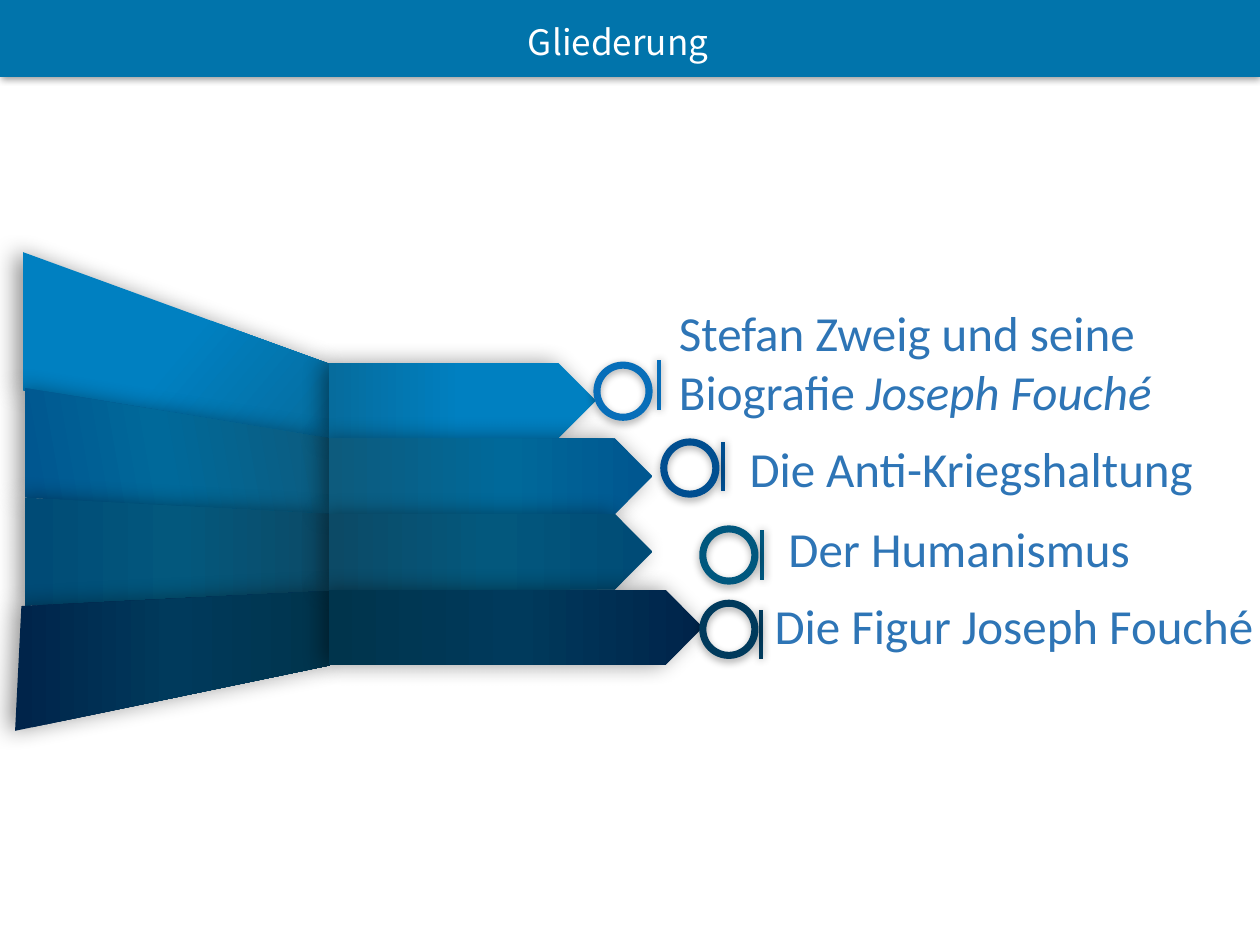
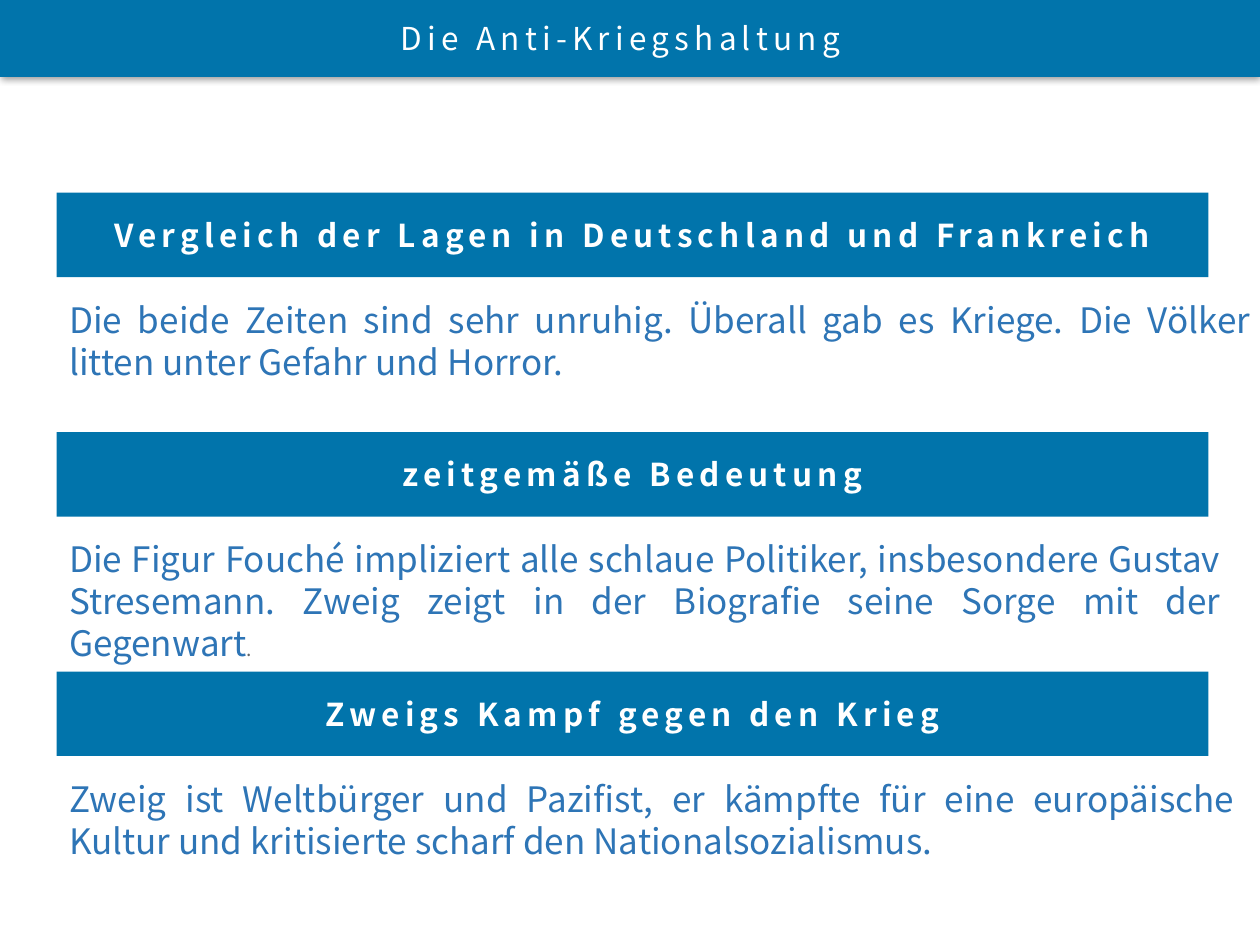
from dataclasses import dataclass

from lxml import etree
from pptx import Presentation
from pptx import util as u
from pptx.dml.color import RGBColor
from pptx.enum import shapes, text
from pptx.oxml import ns


@dataclass(frozen=True)
class Theme:
    band: str = "0174AB"
    body: str = "2E75B6"
    light: str = "FFFFFF"
    muted: str = "666666"
    shade: str = "000000"
    sans: str = "Noto Sans CJK SC"
    agenda_font: str = "Calibri"
    agenda_size: int = 28
    body_size: int = 20
    heading_size: int = 18
    small_size: int = 11
    heading_spacing: int = 3
    band_shadow: tuple = (40, 4, 1, 90)
    ribbon_shadow: tuple = (42, 13, 4, 180)
    ring_shadow: tuple = (35, 5, 1.8, 90)
    rule_shadow: tuple = (40, 5, 0, 0)


@dataclass(frozen=True)
class Run:
    text: str
    size: int
    color: str
    font: str
    bold: bool = False
    italic: bool = False
    spacing: int = 0


@dataclass(frozen=True)
class Topic:
    runs: tuple
    label_box: tuple
    stops: tuple
    panel: tuple
    panel_angle: int
    arrow_width: float
    accent: str
    ring: tuple
    rule: tuple


class Deck:
    def __init__(self, theme):
        self.theme = theme
        self.prs = Presentation()
        self.prs.slide_width = u.Inches(10)
        self.prs.slide_height = u.Inches(7.5)
        self.slide = None

    def new_slide(self, title, box):
        self.slide = self.prs.slides.add_slide(self.prs.slide_layouts[5])
        heading = self.slide.shapes.title
        self.bar((0, 0, 10, 0.61), self.theme.band_shadow)
        self.slide.shapes._spTree.append(heading._element)
        heading.left, heading.top, heading.width, heading.height = map(u.Inches, box)
        self.fill_text(heading.text_frame, [title], text.PP_ALIGN.LEFT)

    def fill_text(self, frame, runs, align, anchor=text.MSO_ANCHOR.TOP):
        frame.word_wrap = True
        frame.vertical_anchor = anchor
        paragraph = frame.paragraphs[0]
        paragraph.alignment = align
        for part in runs:
            run = paragraph.add_run()
            run.text = part.text
            run.font.name = part.font
            run.font.size = u.Pt(part.size)
            run.font.bold = part.bold
            run.font.italic = part.italic
            run.font.color.rgb = RGBColor.from_string(part.color)
            if part.spacing:
                run.font._element.set("spc", str(part.spacing * 100))

    def label(self, box, runs, align=text.PP_ALIGN.LEFT):
        frame = self.slide.shapes.add_textbox(*map(u.Inches, box)).text_frame
        self.fill_text(frame, runs, align)
        frame.auto_size = text.MSO_AUTO_SIZE.SHAPE_TO_FIT_TEXT

    def preset(self, kind, box):
        return self.slide.shapes.add_shape(kind, *map(u.Inches, box))

    def bar(self, box, shadow=None):
        bar = self.preset(shapes.MSO_SHAPE.RECTANGLE, box)
        self.solid(bar, self.theme.band, shadow)
        return bar

    def heading_bar(self, box, run):
        self.fill_text(self.bar(box).text_frame, [run], text.PP_ALIGN.CENTER,
                       text.MSO_ANCHOR.MIDDLE)

    def panel(self, points, stops, angle):
        start, *rest = [tuple(map(u.Inches, point)) for point in points]
        builder = self.slide.shapes.build_freeform(*start)
        builder.add_line_segments(rest, close=True)
        self.gradient(builder.convert_to_shape(), stops, angle)

    def arrow(self, box, stops):
        self.gradient(self.preset(shapes.MSO_SHAPE.PENTAGON, box), stops, 180)

    def ring(self, left, top, color):
        ring = self.preset(shapes.MSO_SHAPE.DONUT, (left, top, 0.47, 0.47))
        ring.adjustments[0] = 0.12
        self.solid(ring, color, self.theme.ring_shadow)

    def rule(self, x, top, color):
        rule = self.slide.shapes.add_connector(
            shapes.MSO_CONNECTOR.STRAIGHT,
            *map(u.Inches, (x, top, x, top + 0.39)))
        rule.line.color.rgb = RGBColor.from_string(color)
        rule.line.width = u.Pt(2.25)
        self.shadow(rule, self.theme.rule_shadow)

    def solid(self, shape, color, shadow):
        shape.fill.solid()
        shape.fill.fore_color.rgb = RGBColor.from_string(color)
        shape.line.fill.background()
        self.shadow(shape, shadow)

    def gradient(self, shape, stops, angle):
        shape.fill.gradient()
        shape.fill.gradient_angle = angle
        stop_list = shape._element.spPr.find(".//" + ns.qn("a:gsLst"))
        for old_stop in list(stop_list):
            stop_list.remove(old_stop)
        for position, color in stops:
            stop = etree.SubElement(stop_list, ns.qn("a:gs"), pos=str(position * 1000))
            etree.SubElement(stop, ns.qn("a:srgbClr"), val=color)
        shape.line.fill.background()
        self.shadow(shape, self.theme.ribbon_shadow)

    def shadow(self, shape, style):
        effects = etree.SubElement(shape._element.spPr, ns.qn("a:effectLst"))
        if not style:
            return
        alpha, blur, distance, direction = style
        outer = etree.SubElement(effects, ns.qn("a:outerShdw"),
                                 blurRad=str(u.Pt(blur)), rotWithShape="0")
        if distance:
            outer.set("dist", str(u.Pt(distance)))
            outer.set("dir", str(direction * 60000))
        color = etree.SubElement(outer, ns.qn("a:srgbClr"), val=self.theme.shade)
        etree.SubElement(color, ns.qn("a:alpha"), val=str(alpha * 1000))


THEME = Theme()


def agenda_run(words, italic=False):
    return Run(words, THEME.agenda_size, THEME.body, THEME.agenda_font, italic=italic)


def body_run(words):
    return Run(words, THEME.body_size, THEME.body, THEME.sans)


def heading_run(words, bold=False):
    return Run(words, THEME.heading_size, THEME.light, THEME.sans, bold,
               spacing=THEME.heading_spacing)


TOPICS = [
    Topic((agenda_run("Stefan Zweig und seine Biografie "),
           agenda_run("Joseph Fouché", italic=True)),
          (5.29, 2.35, 4.75, 1.04),
          ((50, "0080C1"), (100, "066C9D")),
          ((2.62, 2.89), (2.62, 3.51), (0.18, 3.1), (0.18, 2)), 320,
          2.12, "076EB9", (4.71, 2.87), (5.23, 2.86)),
    Topic((agenda_run("Die Anti-Kriegshaltung"),),
          (5.85, 3.43, 4.95, 0.57),
          ((3, "005790"), (45, "00699A"), (100, "0D5B7D")),
          ((0.2, 3.08), (0.2, 3.95), (2.62, 4.1), (2.62, 3.48)), 10,
          2.57, "004E90", (5.24, 3.48), (5.74, 3.51)),
    Topic((agenda_run("Der Humanismus"),),
          (6.16, 4.07, 3.37, 0.57),
          ((1, "004B76"), (50, "03587D"), (100, "0C4A66")),
          ((0.2, 3.95), (0.2, 4.81), (2.62, 4.7), (2.62, 4.08)), 0,
          2.57, "00577E", (5.55, 4.17), (6.05, 4.21)),
    Topic((agenda_run("Die Figur Joseph Fouché"),),
          (6.05, 4.68, 4.57, 0.57),
          ((1, "00244A"), (50, "003A5C"), (100, "00344C")),
          ((0.17, 4.81), (2.62, 4.69), (2.62, 5.28), (0.12, 5.8)), 0,
          2.97, "003A5C", (5.55, 4.76), (6.04, 4.84)),
]

SECTIONS = [
    ("Vergleich der Lagen in Deutschland und Frankreich", 9.58, 0.77,
     [body_run("Die beide Zeiten sind sehr unruhig. Überall gab es Kriege. "
               "Die Völker litten unter Gefahr und Horror.")]),
    ("zeitgemäße Bedeutung", 9.34, 1.11,
     [body_run("Die Figur Fouché impliziert alle schlaue Politiker, insbesondere "
               "Gustav Stresemann. Zweig zeigt in der Biografie seine Sorge mit "
               "der Gegenwart"),
      Run(".", THEME.small_size, THEME.muted, THEME.sans)]),
    ("Zweigs Kampf gegen den Krieg", 9.45, 0.77,
     [body_run("Zweig ist Weltbürger und Pazifist, er kämpfte für eine europäische "
               "Kultur und kritisierte scharf den Nationalsozialismus.")]),
]


def build_outline(deck):
    deck.new_slide(Run("Gliederung", THEME.body_size, THEME.light, THEME.sans),
                   (4.09, 0.11, 3.75, 0.44))
    for topic in TOPICS:
        deck.panel(topic.panel, topic.stops, topic.panel_angle)
    for row, topic in enumerate(TOPICS):
        deck.arrow((2.61, 2.88 + 0.6 * row, topic.arrow_width, 0.6), topic.stops)
    for topic in TOPICS:
        deck.rule(*topic.rule, topic.accent)
        deck.ring(*topic.ring, topic.accent)
        deck.label(topic.label_box, topic.runs)


def build_antiwar(deck):
    deck.new_slide(heading_run("Die Anti-Kriegshaltung"), (3.08, 0.1, 9.79, 0.4))
    for row, (heading, width, height, runs) in enumerate(SECTIONS):
        top = 1.53 + 1.9 * row
        deck.heading_bar((0.45, top, 9.14, 0.67), heading_run(heading, bold=True))
        deck.label((0.45, top + 0.79, width, height), runs, text.PP_ALIGN.JUSTIFY)


def main():
    deck = Deck(THEME)
    build_outline(deck)
    build_antiwar(deck)
    deck.prs.save("out.pptx")


if __name__ == "__main__":
    main()
